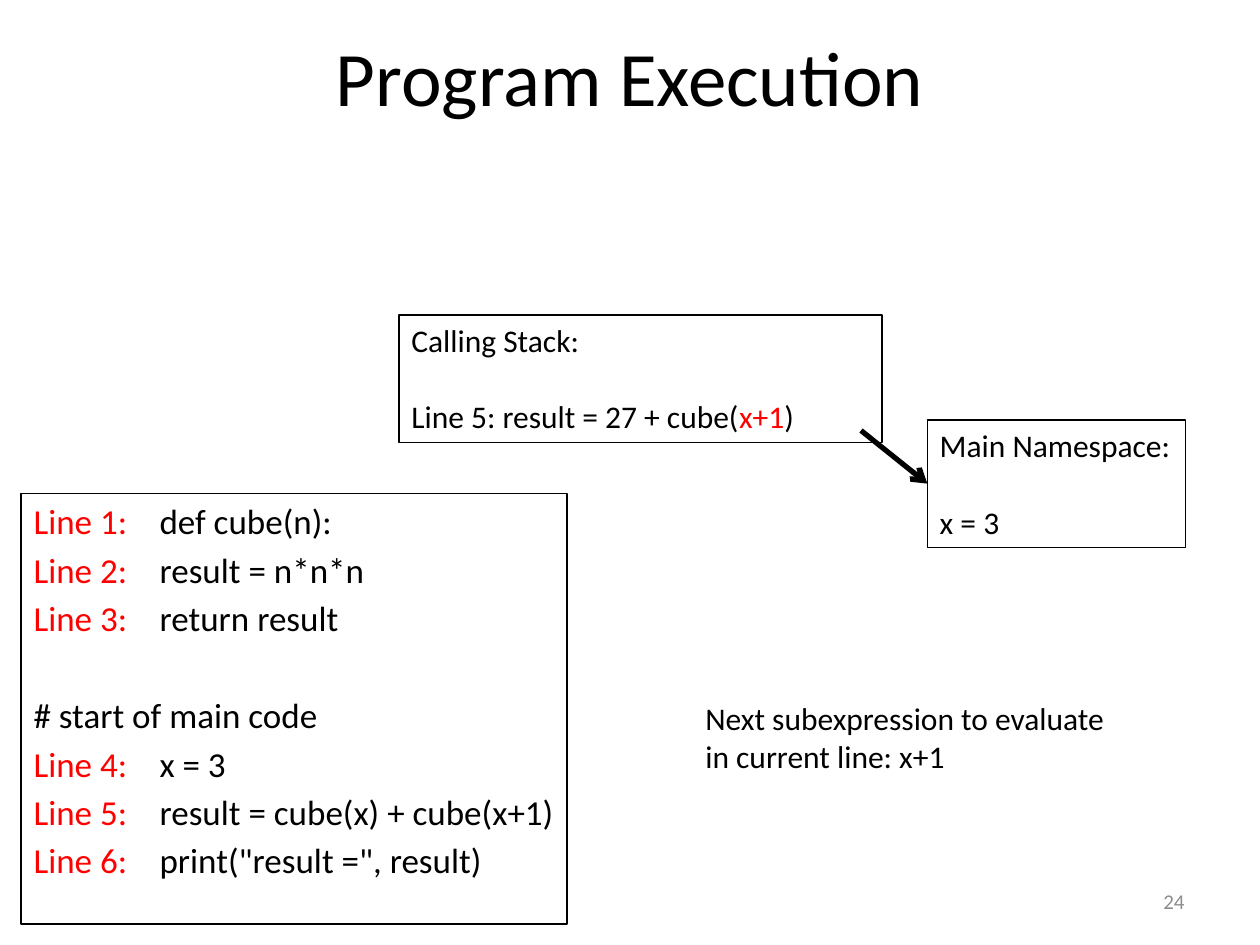
from lxml import etree
from pptx import Presentation
from pptx.dml.color import RGBColor
from pptx.enum.shapes import MSO_CONNECTOR, MSO_SHAPE
from pptx.enum.text import MSO_ANCHOR, MSO_AUTO_SIZE, PP_ALIGN
from pptx.oxml.ns import qn
from pptx.util import Inches, Pt

BLACK = RGBColor(0x00, 0x00, 0x00)
RED = RGBColor(0xFF, 0x00, 0x00)
GRAY = RGBColor(0x8C, 0x8C, 0x8C)
LEFT, CENTER, RIGHT = PP_ALIGN.LEFT, PP_ALIGN.CENTER, PP_ALIGN.RIGHT
TOP, MIDDLE = MSO_ANCHOR.TOP, MSO_ANCHOR.MIDDLE
FIXED = MSO_AUTO_SIZE.NONE
RECTANGLE = MSO_SHAPE.RECTANGLE
STRAIGHT = MSO_CONNECTOR.STRAIGHT

FONT = "Calibri"
COLUMNS, ROWS = 60, 45
CODE_GAP, CODE_BREAK, STACK_BREAK = 3.6, 31.6, 22
CODE_TAB, NESTED_TAB = 0.93, 1.12

CODE_LINES = [
    ("Line 1:", "def cube(n):", CODE_TAB, CODE_GAP),
    ("Line 2:", "result = n*n*n", NESTED_TAB, CODE_GAP),
    ("Line 3:", "return result", NESTED_TAB, CODE_GAP),
    ("", "# start of main code", CODE_TAB, CODE_BREAK),
    ("Line 4:", "x = 3", CODE_TAB, CODE_GAP),
    ("Line 5:", "result = cube(x) + cube(x+1)", CODE_TAB, CODE_GAP),
    ("Line 6:", 'print("result =", result)', CODE_TAB, CODE_GAP),
]


class SlideBuilder:
    """Draws styled elements on one slide, placed on a grid of columns and rows."""

    def __init__(self, presentation):
        self.column = presentation.slide_width / COLUMNS
        self.row = presentation.slide_height / ROWS
        self.slide = presentation.slides.add_slide(presentation.slide_layouts[1])

    def area(self, left, top, width, height):
        return (round(left * self.column), round(top * self.row),
                round(width * self.column), round(height * self.row))

    def place(self, shape, area):
        shape.left, shape.top, shape.width, shape.height = self.area(*area)

    def outline(self, shape):
        shape.line.color.rgb = BLACK
        shape.line.width = Pt(0.75)

    def frame(self, shape, anchor=TOP, wrap=True):
        text_frame = shape.text_frame
        text_frame.auto_size = FIXED
        text_frame.word_wrap = wrap
        text_frame.vertical_anchor = anchor
        return text_frame

    def fill_paragraph(self, paragraph, pieces, size, align=LEFT, gap=0):
        paragraph.alignment = align
        paragraph.space_before = Pt(gap)
        for text, color in pieces:
            run = paragraph.add_run()
            run.text = text
            run.font.name = FONT
            run.font.size = Pt(size)
            run.font.color.rgb = color

    def title(self, text, area):
        shape = self.slide.shapes.title
        self.place(shape, area)
        paragraph = self.frame(shape, MIDDLE).paragraphs[0]
        self.fill_paragraph(paragraph, [(text, BLACK)], 44, CENTER)

    def code(self, lines, area):
        shape = self.slide.placeholders[1]
        self.place(shape, area)
        self.outline(shape)
        text_frame = self.frame(shape)
        for index, (label, statement, tab, gap) in enumerate(lines):
            paragraph = text_frame.add_paragraph() if index else text_frame.paragraphs[0]
            pieces = [(label + "\t", RED)] if label else []
            self.fill_paragraph(paragraph, pieces + [(statement, BLACK)], 20, gap=gap)
            properties = paragraph._p.get_or_add_pPr()
            properties.set("marL", "0")
            properties.set("indent", "0")
            etree.SubElement(properties, qn("a:buNone"))
            tabs = etree.SubElement(properties, qn("a:tabLst"))
            etree.SubElement(tabs, qn("a:tab"), pos=str(Inches(tab)), algn="l")

    def panel(self, heading, pieces, area):
        shape = self.slide.shapes.add_shape(RECTANGLE, *self.area(*area))
        shape.shadow.inherit = False
        shape.fill.background()
        self.outline(shape)
        text_frame = self.frame(shape)
        self.fill_paragraph(text_frame.paragraphs[0], [(heading, BLACK)], 18)
        self.fill_paragraph(text_frame.add_paragraph(), pieces, 18, gap=STACK_BREAK)

    def label(self, lines, area, size=18, color=BLACK, align=LEFT, anchor=TOP, wrap=True):
        shape = self.slide.shapes.add_textbox(*self.area(*area))
        text_frame = self.frame(shape, anchor, wrap)
        for index, line in enumerate(lines):
            paragraph = text_frame.add_paragraph() if index else text_frame.paragraphs[0]
            self.fill_paragraph(paragraph, [(line, color)], size, align)

    def arrow(self, start, end):
        ends = self.area(*start, *end)
        connector = self.slide.shapes.add_connector(STRAIGHT, *ends)
        connector.line.color.rgb = BLACK
        connector.line.width = Pt(3)
        outline = connector._element.spPr.find(qn("a:ln"))
        etree.SubElement(outline, qn("a:tailEnd"), type="arrow")
        etree.SubElement(connector._element.spPr, qn("a:effectLst"))


def main():
    presentation = Presentation()
    presentation.slide_width, presentation.slide_height = Inches(10), Inches(7.5)
    builder = SlideBuilder(presentation)
    builder.title("Program Execution", (3, 1, 54, 5.25))
    builder.code(CODE_LINES, (1, 23.5, 26, 20.5))
    builder.label(["24"], (43, 41.7, 14, 2.4), 12, GRAY, RIGHT, MIDDLE)
    builder.panel("Main Namespace:", [("x = 3", BLACK)], (44.16, 20, 12.3, 6.06))
    stack_line = [("Line 5: result = 27 + cube(", BLACK), ("x+1", RED), (")", BLACK)]
    builder.panel("Calling Stack:", stack_line, (19, 15, 23, 6.06))
    builder.arrow((41, 20.5), (44.16, 23.03))
    builder.label(["Next subexpression to evaluate", "in current line: x+1"],
                  (33, 33, 20.4, 4.26), wrap=False)
    presentation.save("out.pptx")


if __name__ == "__main__":
    main()
